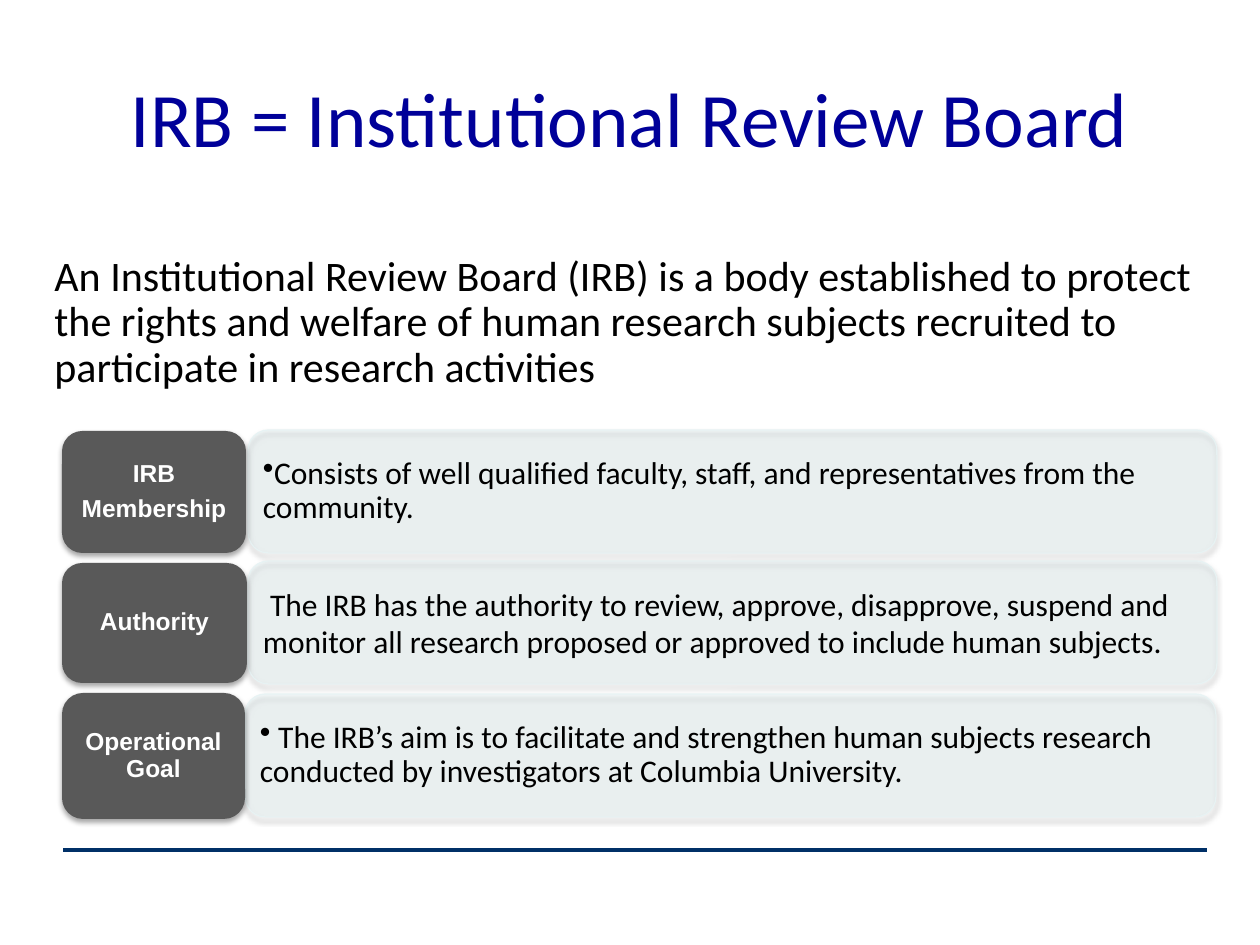
from lxml.etree import SubElement
from pptx import Presentation
from pptx.dml.color import RGBColor
from pptx.enum.shapes import MSO_CONNECTOR as Connector, MSO_SHAPE as Shape
from pptx.enum.text import MSO_ANCHOR as Anchor, PP_ALIGN as Align
from pptx.oxml import parse_xml
from pptx.oxml.ns import nsdecls, qn
from pptx.util import Pt

SCALE = 914400 / 126
BLACK = RGBColor(0x00, 0x00, 0x00)
WHITE = RGBColor(0xFF, 0xFF, 0xFF)
TITLE_BLUE = RGBColor(0x00, 0x00, 0x99)
RULE_BLUE = RGBColor(0x00, 0x30, 0x67)
LABEL_GREY = RGBColor(0x59, 0x59, 0x59)
BAR_FILL = RGBColor(0xBB, 0xE0, 0xE3)
BAR_EDGE = RGBColor(0xE7, 0xF3, 0xF4)
INSET = 6

TITLE = "IRB = Institutional Review Board"
INTRO = (
    "An Institutional Review Board (IRB) is a body established to protect the rights and "
    "welfare of human research subjects recruited to participate in research activities"
)
ROWS = [
    {
        "label": ["IRB", "Membership"],
        "detail": "Consists of well qualified faculty, staff, and representatives from the community.",
        "bullet": True,
        "label_area": (62, 431, 184, 122),
        "bar_area": (248, 430, 969, 123),
    },
    {
        "label": ["Authority"],
        "detail": " The IRB has the authority to review, approve, disapprove, suspend and monitor "
        "all research proposed or approved to include human subjects.",
        "bullet": False,
        "label_area": (62, 563, 185, 120),
        "bar_area": (248, 561, 969, 123),
    },
    {
        "label": ["Operational Goal"],
        "detail": " The IRB’s aim is to facilitate and strengthen human subjects research "
        "conducted by investigators at Columbia University.",
        "bullet": True,
        "label_area": (62, 693, 183, 126),
        "bar_area": (245, 694, 971, 123),
    },
]

TITLE_FONT = {"name": "Calibri", "size": Pt(44)}
INTRO_FONT = {"name": "Calibri", "size": Pt(24)}
DETAIL_FONT = {"name": "Calibri", "size": Pt(18)}
LABEL_FONT = {"name": "Arial", "size": Pt(14), "bold": True}
CENTRED = {"alignment": Align.CENTER}
TIGHT = {"line_spacing": 0.9}
LABEL_PARA = {**CENTRED, **TIGHT, "space_after": Pt(5)}
BULLET_PARA = {**TIGHT, "space_after": Pt(3)}


def px(*lengths):
    return [int(length * SCALE) for length in lengths]


def apply(target, values):
    for name, value in values.items():
        setattr(target, name, value)


def inner(area):
    left, top, width, height = area
    return left + INSET, top + INSET, width - 2 * INSET, height - 2 * INSET


def add_text(page, area, lines, font, color, layout, anchor=Anchor.MIDDLE, margins=None, bullet=False):
    box = page.shapes.add_textbox(*px(*area))
    frame = box.text_frame
    apply(frame, {"word_wrap": True, "vertical_anchor": anchor})
    if margins:
        side, end = px(*margins)
        apply(frame, {"margin_left": side, "margin_right": side, "margin_top": end, "margin_bottom": end})
    for index, line in enumerate(lines):
        para = frame.add_paragraph() if index else frame.paragraphs[0]
        if bullet:
            SubElement(para._p.get_or_add_pPr(), qn("a:buChar"), char="•")
        apply(para, layout)
        span = para.add_run()
        span.text = line
        apply(span.font, font)
        span.font.color.rgb = color


def set_opacity(fill, percent):
    color = fill._xPr.find(qn("a:solidFill"))[0]
    SubElement(color, qn("a:alpha"), val=str(percent * 1000))


def add_panel(page, area, color):
    panel = page.shapes.add_shape(Shape.ROUNDED_RECTANGLE, *px(*area))
    panel.fill.solid()
    panel.fill.fore_color.rgb = color
    panel.line.fill.background()
    panel._element.spPr.append(parse_xml(
        f'<a:effectLst {nsdecls("a")}><a:outerShdw blurRad="{Pt(3.1)}" dist="{Pt(1.8)}" '
        'dir="5400000" rotWithShape="0"><a:srgbClr val="000000"><a:alpha val="35000"/>'
        '</a:srgbClr></a:outerShdw></a:effectLst>'
    ))
    return panel


def add_row(page, row):
    bar = add_panel(page, row["bar_area"], BAR_FILL)
    set_opacity(bar.fill, 15)
    bar.line.color.rgb = BAR_EDGE
    bar.line.width = Pt(0.75)
    set_opacity(bar.line.fill, 90)
    add_text(page, inner(row["bar_area"]), [row["detail"]], DETAIL_FONT, BLACK,
             BULLET_PARA if row["bullet"] else {}, margins=(9, 5), bullet=row["bullet"])
    add_panel(page, row["label_area"], LABEL_GREY)
    add_text(page, inner(row["label_area"]), row["label"], LABEL_FONT, WHITE, LABEL_PARA, margins=(8, 4))


def main():
    deck = Presentation()
    deck.slide_width, deck.slide_height = px(1260, 945)
    page = deck.slides.add_slide(deck.slide_layouts[6])
    rule = page.shapes.add_connector(Connector.STRAIGHT, *px(63, 850, 1207, 850))
    rule.line.color.rgb = RULE_BLUE
    rule.line.width = Pt(2.25)
    SubElement(rule._element.spPr, qn("a:effectLst"))
    add_text(page, (63, 38, 1134, 158), [TITLE], TITLE_FONT, TITLE_BLUE, CENTRED)
    add_text(page, (42, 249, 1176, 242), [INTRO], INTRO_FONT, BLACK, TIGHT, anchor=Anchor.TOP)
    for row in ROWS:
        add_row(page, row)
    deck.save("out.pptx")


if __name__ == "__main__":
    main()
